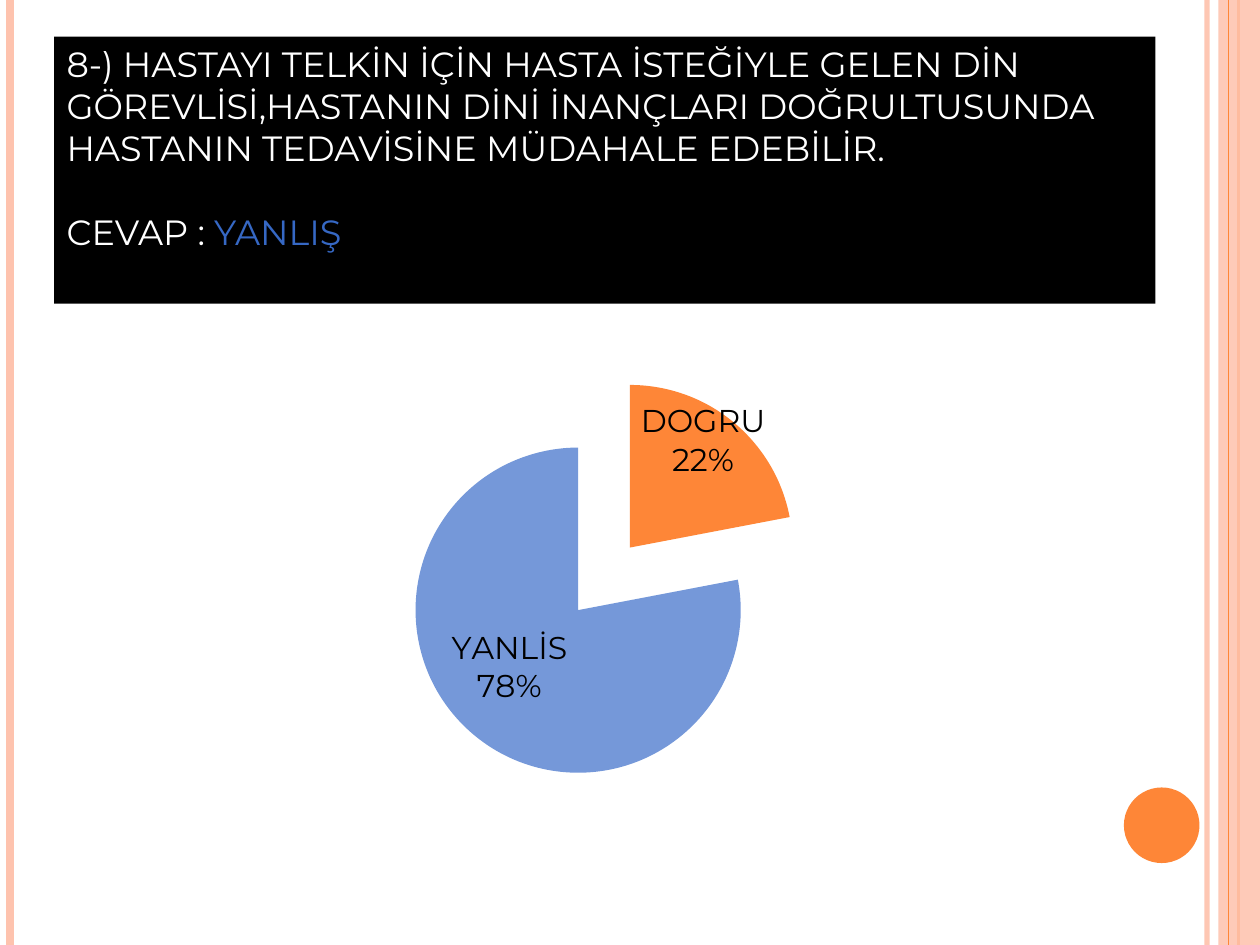
from dataclasses import dataclass

from lxml.etree import SubElement
from pptx import Presentation
from pptx.chart.data import CategoryChartData
from pptx.dml.color import RGBColor
from pptx.enum.chart import XL_CHART_TYPE as ChartType
from pptx.enum.chart import XL_LABEL_POSITION as LabelPosition
from pptx.enum.shapes import MSO_CONNECTOR as Connector
from pptx.enum.shapes import MSO_SHAPE as Shape
from pptx.enum.text import MSO_ANCHOR as Anchor
from pptx.enum.text import PP_ALIGN as Align
from pptx.oxml import parse_xml
from pptx.oxml.ns import nsdecls, qn
from pptx.util import Inches, Pt

PEACH = RGBColor(0xFE, 0xC3, 0xAE)
ORANGE = RGBColor(0xFE, 0x86, 0x37)
BLUE = RGBColor(0x75, 0x98, 0xD9)
ANSWER_BLUE = RGBColor(0x36, 0x68, 0xC4)
BLACK = RGBColor(0, 0, 0)
WHITE = RGBColor(0xFF, 0xFF, 0xFF)
FONT = "Montserrat"
PAGE_HEIGHT = 7.5

QUESTION = (
    "8-) HASTAYI TELKİN İÇİN HASTA İSTEĞİYLE GELEN DİN "
    "GÖREVLİSİ,HASTANIN DİNİ İNANÇLARI DOĞRULTUSUNDA "
    "HASTANIN TEDAVİSİNE MÜDAHALE EDEBİLİR."
)


@dataclass
class Stripe:
    x: float
    color: RGBColor
    width: float
    opacity: int = 100


@dataclass
class Slice:
    """A pie slice; shift moves its label by fractions of the chart size."""
    name: str
    value: int
    color: RGBColor
    shift: tuple[float, float]


STRIPES = [
    Stripe(9.58, PEACH, 3, 93),
    Stripe(0.08, PEACH, 4.5),
    Stripe(9.83, ORANGE, 1.5),
]
THIN_STRIPE = Stripe(9.75, ORANGE, 0.75)
SLICES = [
    Slice("DOGRU", 22, ORANGE, (0.025, -0.08)),
    Slice("YANLİS", 78, BLUE, (-0.02, -0.01)),
]


def set_opacity(element, percent: int) -> None:
    color = next(element.iter(qn("a:srgbClr")))
    SubElement(color, qn("a:alpha"), val=str(percent * 1000))


def add_stripe(page, stripe: Stripe) -> None:
    x = Inches(stripe.x)
    line = page.shapes.add_connector(Connector.STRAIGHT, x, 0, x, Inches(PAGE_HEIGHT))
    line.line.color.rgb = stripe.color
    line.line.width = Pt(stripe.width)
    properties = line._element.spPr
    if stripe.opacity < 100:
        set_opacity(properties, stripe.opacity)
    SubElement(properties, qn("a:effectLst"))


def add_filled(page, kind: Shape, x: float, y: float, width: float, height: float,
               color: RGBColor):
    shape = page.shapes.add_shape(kind, Inches(x), Inches(y), Inches(width), Inches(height))
    shape.shadow.inherit = False
    shape.fill.solid()
    shape.fill.fore_color.rgb = color
    shape.line.fill.background()
    return shape


def add_question(page) -> None:
    box = add_filled(page, Shape.RECTANGLE, 0.43, 0.29, 8.74, 2.12, BLACK)
    frame = box.text_frame
    frame.word_wrap = True
    frame.vertical_anchor = Anchor.TOP
    frame.text = QUESTION
    answer = frame.add_paragraph()
    answer.space_before = Pt(24)
    answer.add_run().text = "CEVAP : "
    span = answer.add_run()
    span.text = "YANLIŞ"
    for para in frame.paragraphs:
        para.alignment = Align.LEFT
        para.font.size = Pt(20)
        para.font.name = FONT
        para.font.color.rgb = WHITE
    span.font.color.rgb = ANSWER_BLUE


def manual_layout(**values):
    """Return a c:layout element with the given settings, in schema order."""
    settings = "".join(f'<c:{key} val="{value}"/>' for key, value in values.items())
    return parse_xml(
        f'<c:layout {nsdecls("c")}><c:manualLayout>{settings}</c:manualLayout></c:layout>'
    )


def style_slice(series, index: int, part: Slice) -> None:
    point = series.points[index]
    point.format.fill.solid()
    point.format.fill.fore_color.rgb = part.color
    point.data_label.position = LabelPosition.CENTER
    style_font(point.data_label.font)
    label = series.data_labels._element.findall(qn("c:dLbl"))[index]
    for tag, shown in (("c:showVal", "0"), ("c:showCatName", "1"), ("c:showPercent", "1")):
        label.find(qn(tag)).set("val", shown)
    x, y = part.shift
    label.find(qn("c:idx")).addnext(manual_layout(x=x, y=y))


def style_font(font) -> None:
    font.size = Pt(18)
    font.name = FONT
    font.color.rgb = BLACK


def add_pie(page) -> None:
    data = CategoryChartData()
    data.categories = [part.name for part in SLICES]
    data.add_series("Series 1", [part.value for part in SLICES])
    chart = page.shapes.add_chart(
        ChartType.PIE, Inches(1.46), Inches(2.41), Inches(6.75), Inches(4.37), data
    ).chart
    chart.has_title = False
    chart.has_legend = False
    style_font(chart.font)
    chart.font.name = "TeX Gyre Schola"

    plot = chart.plots[0]
    plot.vary_by_categories = True
    series = plot.series[0]
    series.format.line.fill.background()
    explosion = parse_xml(f'<c:explosion {nsdecls("c")} val="25"/>')
    series._element.find(qn("c:spPr")).addnext(explosion)
    labels = series.data_labels
    labels.show_value = False
    labels.show_category_name = True
    labels.show_percentage = True
    style_font(labels.font)
    for index, part in enumerate(SLICES):
        style_slice(series, index, part)

    area = next(chart._chartSpace.iter(qn("c:plotArea")))
    old_layout = area.find(qn("c:layout"))
    if old_layout is not None:
        area.remove(old_layout)
    area.insert(0, manual_layout(
        layoutTarget="inner", xMode="edge", yMode="edge", x=0.255, y=0.13, w=0.478, h=0.74
    ))


def main() -> None:
    deck = Presentation()
    deck.slide_width = Inches(10)
    deck.slide_height = Inches(PAGE_HEIGHT)
    page = deck.slides.add_slide(deck.slide_layouts[6])
    for stripe in STRIPES:
        add_stripe(page, stripe)
    band = add_filled(page, Shape.RECTANGLE, 9.67, 0, 0.33, PAGE_HEIGHT, PEACH)
    set_opacity(band._element.spPr, 87)
    add_stripe(page, THIN_STRIPE)
    add_filled(page, Shape.OVAL, 8.92, 6.25, 0.6, 0.6, ORANGE)
    add_question(page)
    add_pie(page)
    deck.save("out.pptx")


if __name__ == "__main__":
    main()
